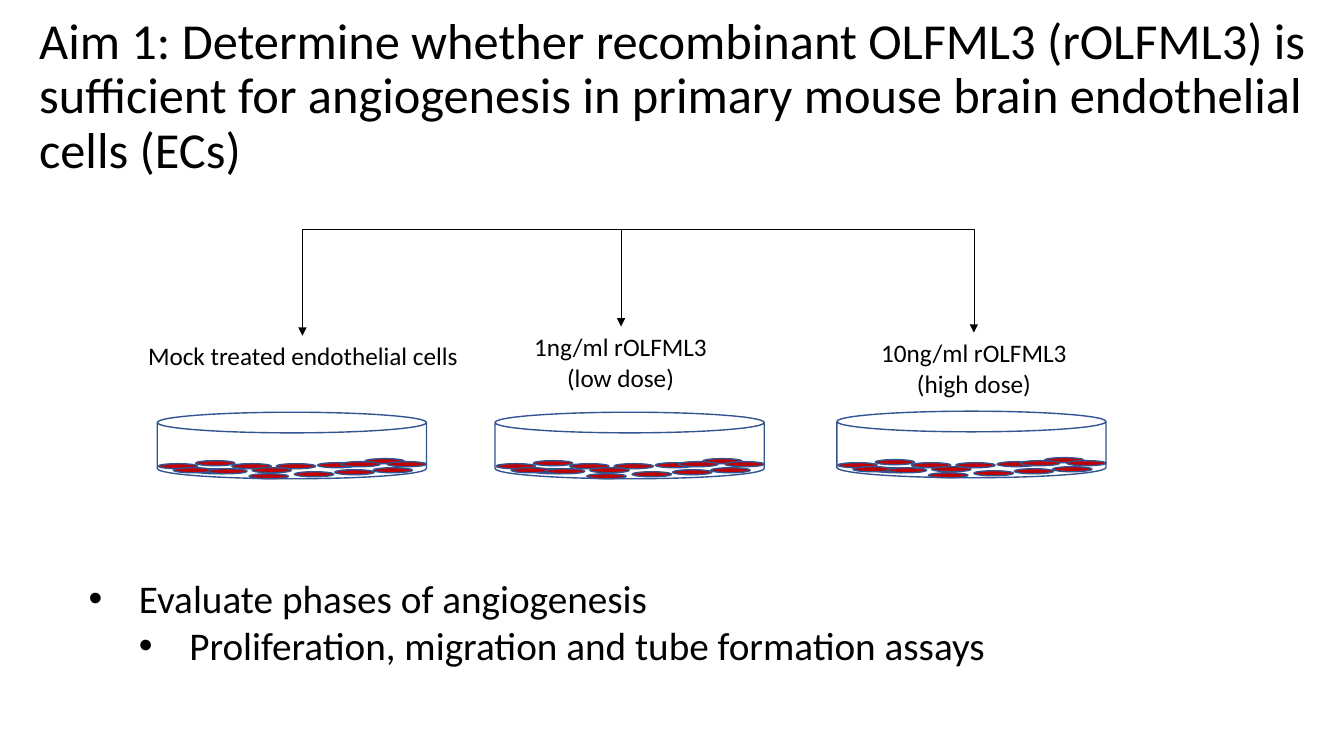
"""Build the Aim 1 slide: three treated endothelial cell dishes and their assays."""
from lxml import etree
from pptx import Presentation
from pptx import util as u
from pptx.dml.color import RGBColor
from pptx.enum import shapes, text
from pptx.oxml.ns import qn

BLACK = RGBColor(0x00, 0x00, 0x00)
RED = RGBColor(0xC0, 0x00, 0x00)
BLUE = RGBColor(0x32, 0x54, 0x91)
PX = 9144
FONT = "Calibri"

TITLE = ("Aim 1: Determine whether recombinant OLFML3 (rOLFML3) is sufficient for "
         "angiogenesis in primary mouse brain endothelial cells (ECs)")
TITLE_BOX = (29, 24, 1346, 145)
TREATMENTS = [
    {"label": ["Mock treated endothelial cells"], "label_box": (135, 333, 331, 40),
     "dish": (156, 409), "arrow": ((422, 228), (300, 333))},
    {"label": ["1ng/ml rOLFML3", "(low dose)"], "label_box": (519, 324, 193, 71),
     "dish": (491, 409), "arrow": ((422, 228), (616, 324))},
    {"label": ["10ng/ml rOLFML3", "(high dose)"], "label_box": (863, 330, 206, 71),
     "dish": (830, 408), "arrow": ((616, 228), (966, 330))},
]
DISH_SIZE = (267, 66)
CELL_SIZE = (39, 5)
CELL_OFFSETS = [(1, 51), (38, 56), (74, 51), (38, 48), (91, 61), (118, 51), (136, 59), (159, 50),
                (176, 57), (206, 46), (214, 55), (16, 55), (228, 49), (94, 55), (50, 56), (182, 49)]
ASSAYS = ["Evaluate phases of angiogenesis", "Proliferation, migration and tube formation assays"]
ASSAYS_BOX = (78, 565, 920, 104)
INDENT = 50


def px(*lengths):
    return [u.Emu(length * PX) for length in lengths]


def add_text(slide, lines, box, size, align=text.PP_ALIGN.LEFT, wrap=False,
             anchor=text.MSO_ANCHOR.TOP, spacing=None, bullets=False):
    frame = slide.shapes.add_textbox(*px(*box)).text_frame
    frame.word_wrap = wrap
    frame.auto_size = text.MSO_AUTO_SIZE.NONE if wrap else text.MSO_AUTO_SIZE.SHAPE_TO_FIT_TEXT
    frame.vertical_anchor = anchor
    for level, line in enumerate(lines):
        paragraph = frame.add_paragraph() if level else frame.paragraphs[0]
        paragraph.alignment = align
        if spacing:
            paragraph.line_spacing = spacing
        if bullets:
            paragraph.level = level
            properties = paragraph._p.get_or_add_pPr()
            properties.set("marL", str(INDENT * (level + 1) * PX))
            properties.set("indent", str(-INDENT * PX))
            etree.SubElement(properties, qn("a:buFont")).set("typeface", "Arial")
            etree.SubElement(properties, qn("a:buChar")).set("char", "•")
        run = paragraph.add_run()
        run.text = line
        run.font.name, run.font.size = FONT, u.Pt(size)
        run.font.color.rgb = BLACK


def add_outlined(group, preset, box, fill=None):
    part = group.shapes.add_shape(preset, *px(*box))
    part.shadow.inherit = False
    part.line.color.rgb = BLUE
    part.line.width = u.Pt(1)
    if fill is None:
        part.fill.background()
    else:
        part.fill.solid()
        part.fill.fore_color.rgb = fill
    return part


def add_dish(slide, left, top):
    dish = slide.shapes.add_group_shape()
    wall = add_outlined(dish, shapes.MSO_SHAPE.CAN, (left, top, *DISH_SIZE))
    wall.adjustments[0] = 0.31
    for across, down in CELL_OFFSETS:
        add_outlined(dish, shapes.MSO_SHAPE.OVAL, (left + across, top + down, *CELL_SIZE), RED)


def add_arrow(slide, start, end):
    arrow = slide.shapes.add_connector(shapes.MSO_CONNECTOR.ELBOW, *px(*start, *end))
    arrow.line.color.rgb = BLACK
    arrow.line.width = u.Pt(0.5)
    properties = arrow._element.spPr
    properties.find(qn("a:prstGeom")).set("prst", "bentConnector2")
    etree.SubElement(properties.find(qn("a:ln")), qn("a:tailEnd")).set("type", "triangle")
    etree.SubElement(properties, qn("a:effectLst"))


def main():
    deck = Presentation()
    deck.slide_width, deck.slide_height = px(1333, 750)
    slide = deck.slides.add_slide(deck.slide_layouts[6])
    add_text(slide, [TITLE], TITLE_BOX, 36, wrap=True, anchor=text.MSO_ANCHOR.MIDDLE, spacing=0.9)
    for treatment in TREATMENTS:
        add_dish(slide, *treatment["dish"])
        add_text(slide, treatment["label"], treatment["label_box"], 18,
                 align=text.PP_ALIGN.CENTER)
        add_arrow(slide, *treatment["arrow"])
    add_text(slide, ASSAYS, ASSAYS_BOX, 28, bullets=True)
    deck.save("out.pptx")


if __name__ == "__main__":
    main()
